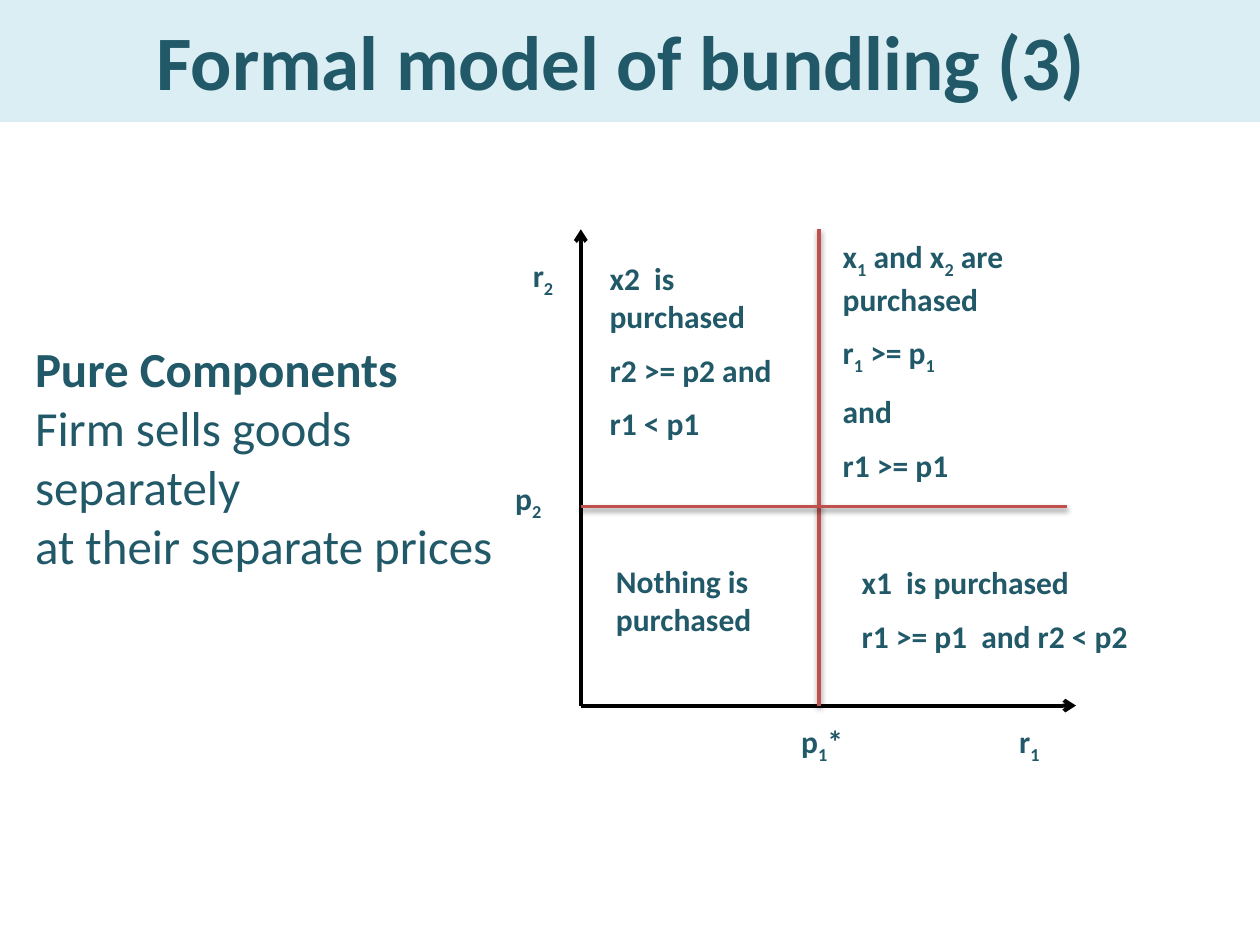
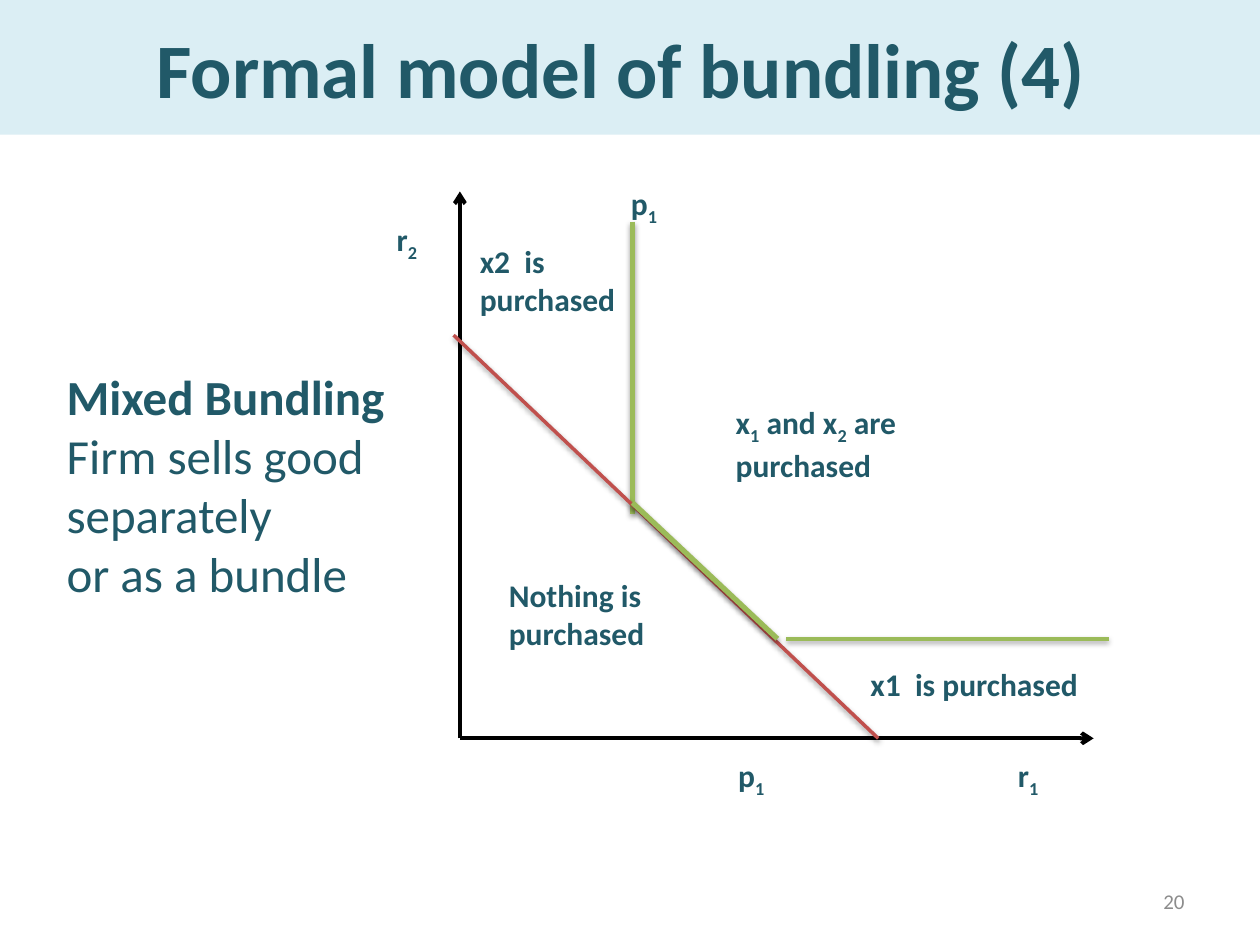
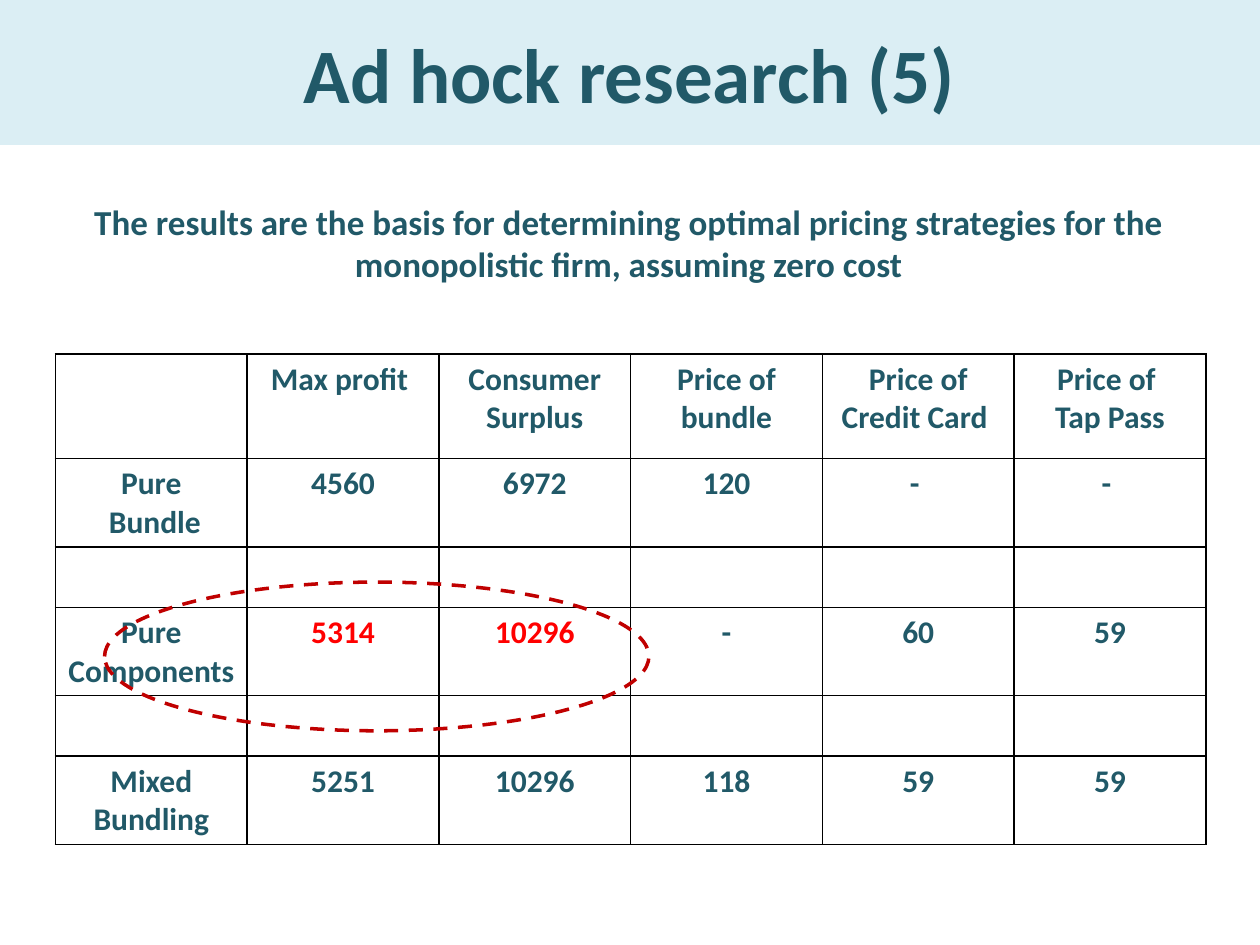
from pptx import Presentation
from pptx import util as u
from pptx.dml.color import RGBColor
from pptx.enum import dml, shapes, text
from pptx.oxml import ns, parse_xml

TEAL, BAND, RED, GREEN = "215968", "DBEEF4", "C0504D", "9BBB59"
BLACK, GREY = "000000", "8C8C8C"
LEFT, MID, RIGHT = text.PP_ALIGN.LEFT, text.PP_ALIGN.CENTER, text.PP_ALIGN.RIGHT
NSA = ns.nsdecls("a")


def write(frame, words, size=18, color=TEAL, bold=True, align=LEFT, gap=0):
    """Fill a frame, one paragraph a line; "_" lowers the next character."""
    for i, row in enumerate(words.split("\n")):
        para = frame.paragraphs[0] if i == 0 else frame.add_paragraph()
        para.alignment = align
        if i:
            para.space_before = u.Pt(gap)
        first, *rest = row.split("_")
        parts = [(first, False)]
        for part in rest:
            parts += [(part[0], True), (part[1:], False)]
        for part, low in parts:
            if not part:
                continue
            run = para.add_run()
            run.text = part
            run.font.name = "Calibri"
            run.font.size = u.Pt(size)
            run.font.bold = bold
            run.font.color.rgb = RGBColor.from_string(color)
            if low:
                run.font.element.set("baseline", "-25000") if hasattr(run.font, "element") \
                    else run._r.get_or_add_rPr().set("baseline", "-25000")


def draw(slide, start, end, color, width, arrow=False):
    """Draw a line: black ones are plain, coloured ones cast a soft shadow."""
    line = slide.shapes.add_connector(
        shapes.MSO_CONNECTOR.STRAIGHT, *[u.Inches(n) for n in start + end])
    line.line.color.rgb = RGBColor.from_string(color)
    line.line.width = u.Pt(width)
    props = line._element.spPr
    if arrow:
        props.find(ns.qn("a:ln")).append(parse_xml(f'<a:tailEnd {NSA} type="arrow"/>'))
    glow = "" if color == BLACK else (
        '<a:outerShdw blurRad="39370" dist="20320" dir="5400000" rotWithShape="0">'
        '<a:srgbClr val="000000"><a:alpha val="38000"/></a:srgbClr></a:outerShdw>')
    props.append(parse_xml(f"<a:effectLst {NSA}>{glow}</a:effectLst>"))


deck = Presentation()
deck.slide_width, deck.slide_height = u.Inches(10), u.Inches(7.5)

# Title bands
pages = []
for title, top, height in [("Formal model of bundling (3) ", -0.02, 0.99),
                           ("Formal model of bundling (4) ", 0, 1.07),
                           ("Ad hock research (5)", 0, 1.15)]:
    page = deck.slides.add_slide(deck.slide_layouts[6])
    band = page.shapes.add_shape(shapes.MSO_SHAPE.RECTANGLE, 0, u.Inches(top),
                                 deck.slide_width, u.Inches(height))
    band.shadow.inherit = False
    band.fill.solid()
    band.fill.fore_color.rgb = RGBColor.from_string(BAND)
    band.line.fill.background()
    band.text_frame.vertical_anchor = text.MSO_ANCHOR.MIDDLE
    write(band.text_frame, title, 44, align=MID)
    pages.append(page)
parts, mixed, study = pages

# Axes and price lines
for page, x, y, top, right in [(parts, 4.61, 5.6, 1.82, 8.54),
                               (mixed, 3.65, 5.86, 1.52, 8.68)]:
    draw(page, (x, y), (x, top), BLACK, 2.25, True)
    draw(page, (x, y), (right, y), BLACK, 2.25, True)
for page, start, end, color, width in [
        (parts, (6.5, 1.82), (6.5, 5.6), RED, 2),
        (parts, (4.61, 4.02), (8.47, 4.02), RED, 2),
        (mixed, (5.02, 1.76), (5.02, 4.08), GREEN, 3),
        (mixed, (3.6, 2.66), (6.97, 5.86), RED, 2),
        (mixed, (8.8, 5.07), (6.24, 5.07), GREEN, 2),
        (mixed, (6.17, 5.07), (5.02, 3.99), GREEN, 3)]:
    draw(page, start, end, color, width)

# Labels of axes and areas
for page, left, top, width, height, words in [
        (parts, 7.99, 5.68, 0.39, 0.4, "r_1"),
        (parts, 4.13, 1.98, 0.39, 0.4, "r_2"),
        (parts, 6.26, 5.68, 0.55, 0.4, "p_1*"),
        (parts, 3.99, 3.75, 0.55, 0.4, "p_2"),
        (parts, 4.74, 2.01, 1.63, 1.62, "x2  is purchased\nr2 >= p2 and\nr1 < p1"),
        (parts, 6.59, 1.83, 1.6, 2.07,
         "x_1 and x_2 are purchased\nr_1 >= p_1\nand\nr1 >= p1"),
        (parts, 6.74, 4.42, 2.83, 0.86, "x1  is purchased\nr1 >= p1  and r2 < p2"),
        (parts, 4.79, 4.41, 1.57, 0.71, "Nothing is purchased"),
        (mixed, 7.98, 5.95, 0.5, 0.46, "r_1"),
        (mixed, 3.05, 1.7, 0.5, 0.46, "r_2"),
        (mixed, 5.76, 5.95, 0.7, 0.4, "p_1"),
        (mixed, 4.91, 1.41, 0.7, 0.4, "p_1"),
        (mixed, 3.71, 1.87, 1.33, 0.71, "x2  is purchased"),
        (mixed, 5.74, 3.15, 2.05, 0.71, "x_1 and x_2 are purchased"),
        (mixed, 6.81, 5.23, 2.12, 0.4, "x1  is purchased"),
        (mixed, 3.94, 4.52, 1.57, 0.71, "Nothing is purchased")]:
    box = page.shapes.add_textbox(*[u.Inches(n) for n in (left, top, width, height)])
    box.text_frame.word_wrap = True
    write(box.text_frame, words, gap=9)

# Strategy summaries
for page, left, top, width, words in [
        (parts, 0.18, 2.64, 3.87,
         "Pure Components\nFirm sells goods\nseparately\nat their separate prices"),
        (mixed, 0.43, 2.86, 2.75,
         "Mixed Bundling\nFirm sells good\nseparately\nor as a bundle")]:
    box = page.shapes.add_textbox(*[u.Inches(n) for n in (left, top, width, 1.99)])
    box.text_frame.word_wrap = False
    write(box.text_frame, words, 28, bold=False)
    box.text_frame.paragraphs[0].runs[0].font.bold = True

# Page number
box = mixed.shapes.add_textbox(*[u.Inches(n) for n in (7.17, 6.95, 2.33, 0.4)])
box.text_frame.vertical_anchor = text.MSO_ANCHOR.MIDDLE
box.text_frame.word_wrap = True
write(box.text_frame, "20", 12, GREY, False, RIGHT)

# Research results
box = study.shapes.add_textbox(*[u.Inches(n) for n in (0.33, 1.54, 9.32, 0.77)])
box.text_frame.word_wrap = True
write(box.text_frame, "The results are the basis for determining optimal pricing strategies "
      "for the monopolistic firm, assuming zero cost", 20, align=MID)

blank = [""] * 6
rows = [
    (0.83, ["", "Max profit ", "Consumer Surplus", "Price of bundle",
            "Price of Credit Card ", "Price of \nTap Pass"]),
    (0.7, ["Pure\n Bundle", "4560", "6972", "120", "- ", "- "]),
    (0.48, blank),
    (0.7, ["Pure Components", "5314", "10296", "-", "60", "59"]),
    (0.48, blank),
    (0.7, ["Mixed Bundling", "5251", "10296", "118", "59", "59"])]
table = study.shapes.add_table(
    len(rows), 6, *[u.Inches(n) for n in (0.44, 2.81, 9.13, 3.89)]).table
table.first_row = table.horz_banding = False
for r, (height, cells) in enumerate(rows):
    table.rows[r].height = u.Inches(height)
    for c, words in enumerate(cells):
        cell = table.cell(r, c)
        best = r == 3 and c in (1, 2)
        write(cell.text_frame, words, color="FF0000" if best else TEAL, align=MID)
        props = cell._tc.get_or_add_tcPr()
        for side in "LRTB":
            props.append(parse_xml(
                f'<a:ln{side} {NSA} w="12700"><a:solidFill><a:srgbClr val="{BLACK}"/>'
                f"</a:solidFill></a:ln{side}>"))
        cell.fill.background()

ring = study.shapes.add_shape(shapes.MSO_SHAPE.OVAL,
                              *[u.Inches(n) for n in (0.83, 4.62, 4.32, 1.18)])
ring.shadow.inherit = False
ring.fill.background()
ring.line.color.rgb = RGBColor.from_string("C00000")
ring.line.width = u.Pt(2)
ring.line.dash_style = dml.MSO_LINE.DASH

deck.save("out.pptx")
